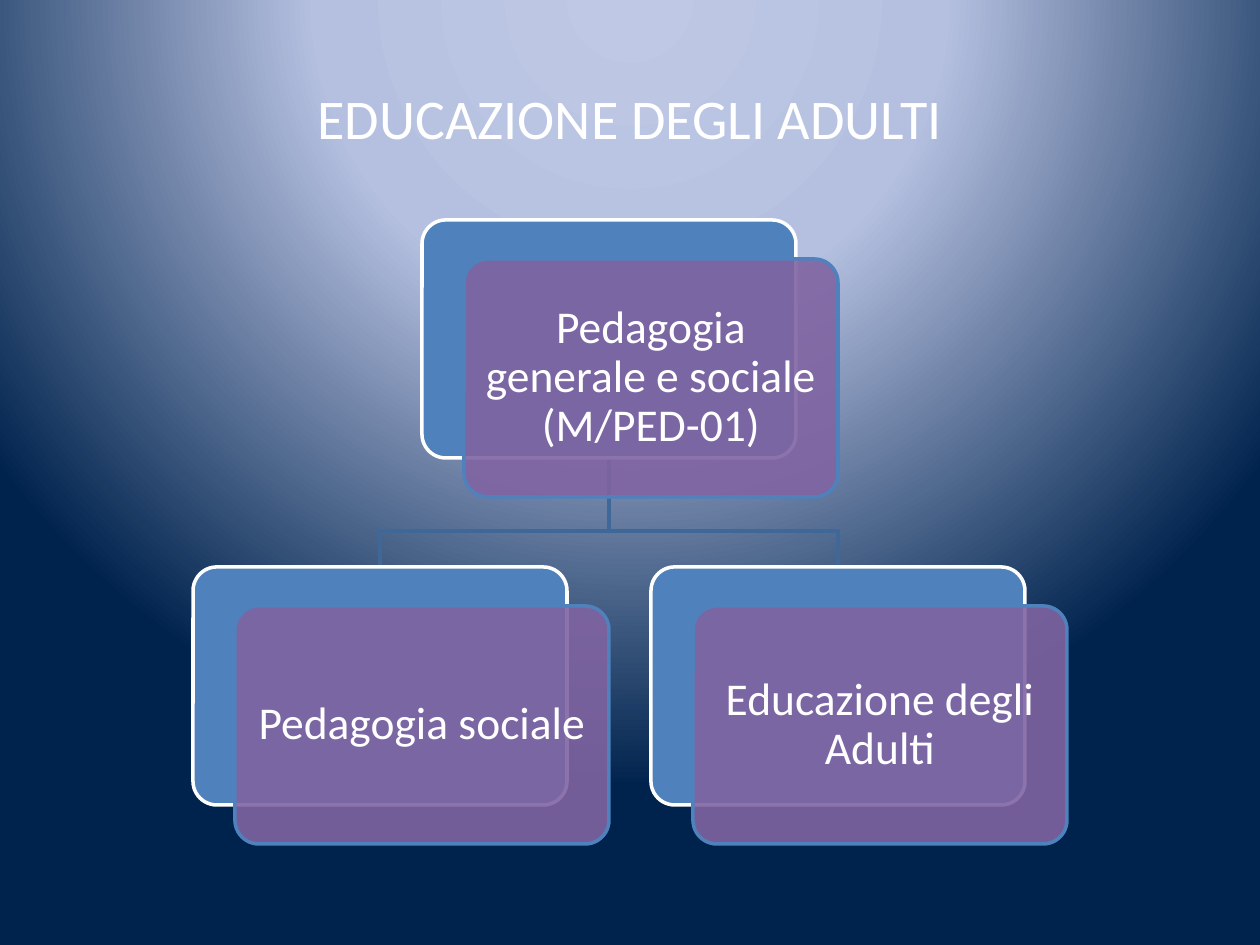
"""Build a slide with a small hierarchy of layered cards on a radial background."""
from dataclasses import dataclass

from lxml import etree
from pptx import Presentation
from pptx import util as u
from pptx.dml.color import RGBColor
from pptx.enum import shapes, text
from pptx.oxml import ns, parse_xml

SCALE = 914400 / 126
CARD_WIDTH, CARD_HEIGHT = 374, 238
SHIFT_X, SHIFT_Y = 42, 39
INSET = 7
COLOURS = {
    "blue": "4F81BD",
    "purple": "8064A2",
    "link": "3F6797",
    "white": "FFFFFF",
    "glow": "BFC9E5",
    "haze": "B5C0E0",
    "night": "00234D",
}
BACKGROUND_STOPS = {0: "glow", 40: "haze", 100: "night"}


@dataclass(frozen=True)
class Card:
    """A node of the hierarchy, placed by the corner of its back panel."""

    label: str
    left: int
    top: int

    @property
    def middle(self) -> int:
        """Return the horizontal centre of the back panel."""
        return self.left + CARD_WIDTH // 2


ROOT = Card("Pedagogia generale e sociale (M/PED-01)", 422, 220)
CHILDREN = [
    Card("Educazione degli Adulti", 651, 567),
    Card("Pedagogia sociale", 193, 567),
]


def px(length: int) -> u.Emu:
    """Turn px into EMU."""
    return u.Emu(round(length * SCALE))


def colour(name: str) -> RGBColor:
    """Look up a named colour."""
    return RGBColor.from_string(COLOURS[name])


def paint_background(page) -> None:
    """Fill the page with a circular gradient centred above its top edge."""
    page.background.fill.gradient()
    stops = "".join(
        f'<a:gs pos="{place * 1000}"><a:srgbClr val="{COLOURS[name]}"/></a:gs>'
        for place, name in BACKGROUND_STOPS.items()
    )
    gradient = parse_xml(
        f'<a:gradFill {ns.nsdecls("a")} rotWithShape="1"><a:gsLst>{stops}</a:gsLst>'
        '<a:path path="circle"><a:fillToRect l="50000" t="-80000" r="50000" b="180000"/>'
        "</a:path></a:gradFill>"
    )
    current = page.element.find(".//" + ns.qn("a:gradFill"))
    current.getparent().replace(current, gradient)


def write(box, words: str, size: int, inset: int, spacing: float) -> None:
    """Set one centred white paragraph in a box."""
    frame = box.text_frame
    frame_format = {
        "word_wrap": True,
        "vertical_anchor": text.MSO_ANCHOR.MIDDLE,
        **{f"margin_{side}": px(inset) for side in ("left", "right", "top", "bottom")},
    }
    for name, value in frame_format.items():
        setattr(frame, name, value)
    para = frame.paragraphs[0]
    para.alignment = text.PP_ALIGN.CENTER
    para.line_spacing = spacing
    span = para.add_run()
    span.text = words
    for name, value in {"name": "Calibri", "size": u.Pt(size)}.items():
        setattr(span.font, name, value)
    span.font.color.rgb = colour("white")


def outline(shape, name: str) -> None:
    """Give a shape a plain line without shadow."""
    shape.shadow.inherit = False
    shape.line.color.rgb = colour(name)
    shape.line.width = u.Pt(2)


def draw_panel(page, left: int, top: int, fill: str, line: str):
    """Draw one rounded panel."""
    panel = page.shapes.add_shape(
        shapes.MSO_SHAPE.ROUNDED_RECTANGLE,
        *map(px, (left, top, CARD_WIDTH, CARD_HEIGHT)),
    )
    panel.adjustments[0] = 0.1
    panel.fill.solid()
    panel.fill.fore_color.rgb = colour(fill)
    outline(panel, line)
    return panel


def draw_card(page, card: Card) -> None:
    """Draw a back panel and a translucent labelled front panel."""
    draw_panel(page, card.left, card.top, "blue", "white")
    front = draw_panel(page, card.left + SHIFT_X, card.top + SHIFT_Y, "purple", "blue")
    tint = front.element.spPr.find(ns.qn("a:solidFill"))[0]
    etree.SubElement(tint, ns.qn("a:alpha"), val="90000")
    write(front, card.label, 26, INSET, 0.9)


def draw_link(page, parent: Card, child: Card) -> None:
    """Draw the stepped line from a parent card to a child card."""
    start = parent.top + CARD_HEIGHT
    bend = start + 73
    builder = page.shapes.build_freeform(parent.middle, start, SCALE)
    builder.add_line_segments(
        [(parent.middle, bend), (child.middle, bend), (child.middle, child.top)],
        close=False,
    )
    link = builder.convert_to_shape()
    link.fill.background()
    outline(link, "link")


def main() -> None:
    """Build and save the deck."""
    deck = Presentation()
    deck.slide_width, deck.slide_height = px(1260), px(945)
    page = deck.slides.add_slide(deck.slide_layouts[6])
    paint_background(page)
    title = page.shapes.add_textbox(*map(px, (63, 38, 1134, 158)))
    write(title, "EDUCAZIONE DEGLI ADULTI", 32, INSET, 1.0)
    for child in CHILDREN:
        draw_link(page, ROOT, child)
    for card in (ROOT, *reversed(CHILDREN)):
        draw_card(page, card)
    deck.save("out.pptx")


if __name__ == "__main__":
    main()
